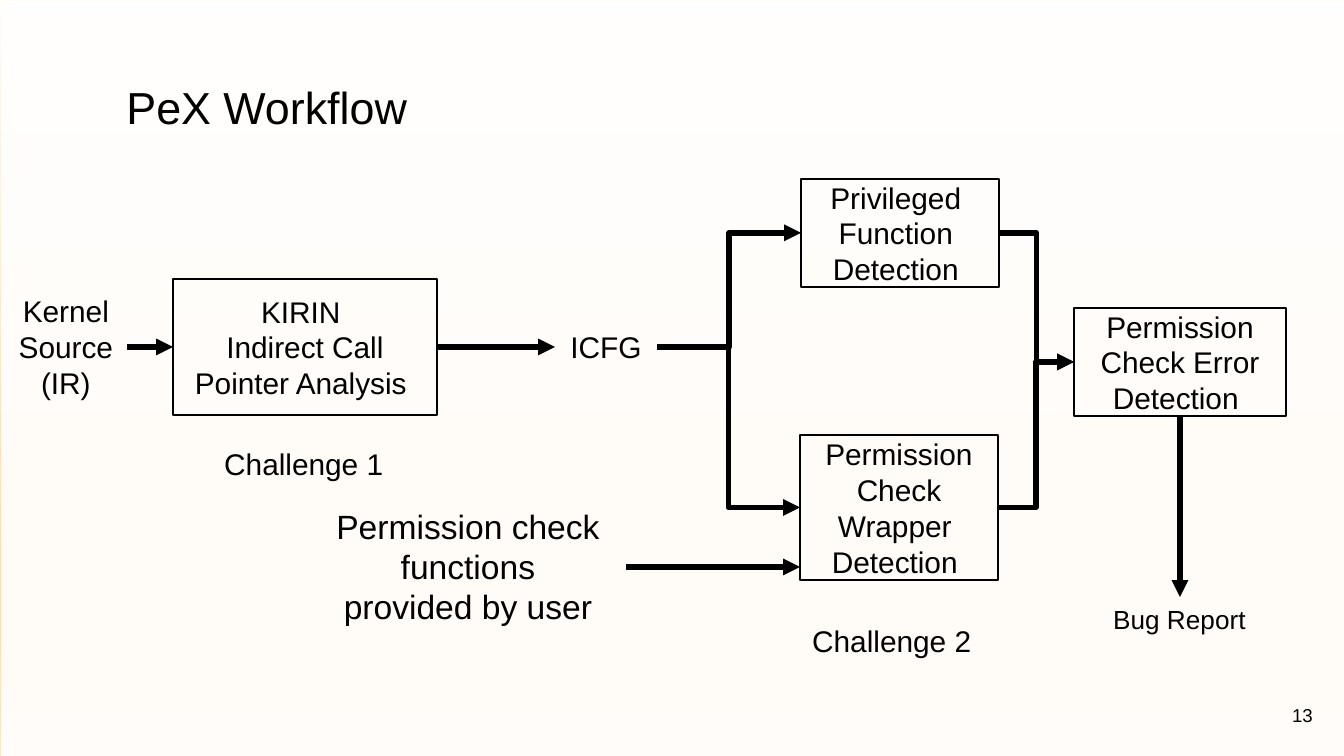
"""Builds the PeX workflow slide."""
from copy import deepcopy
from dataclasses import dataclass
from lxml.etree import SubElement
from pptx import Presentation
from pptx.dml.color import RGBColor as RGB
from pptx.enum.shapes import MSO_CONNECTOR as LINK, MSO_SHAPE as SHAPE
from pptx.enum.text import MSO_ANCHOR as ANCHOR, MSO_AUTO_SIZE as AUTO, PP_ALIGN as ALIGN
from pptx.oxml.ns import qn
from pptx.util import Emu, Pt


@dataclass
class Theme:
    font: str = "Arial"
    ink: RGB = RGB(0, 0, 0)
    veil: RGB = RGB(255, 255, 255)
    glow: tuple = ((0, "FFFBF5"), (0.74, "FFD9A9"), (0.83, "FFD9A9"), (1, "FFE6C6"))
    title: int = 24
    large: int = 18
    body: int = 16
    small: int = 14
    page: int = 10


theme = Theme()
SCALE = 914400 / 134.4


def px(*nums):
    return [Emu(round(n * SCALE)) for n in nums]


def write(shape, text, size, align=ALIGN.CENTER, anchor=ANCHOR.MIDDLE, wrap=True, grow=False):
    frame = shape.text_frame
    frame.text = text
    frame.word_wrap = wrap
    frame.vertical_anchor = anchor
    frame.auto_size = AUTO.SHAPE_TO_FIT_TEXT if grow else AUTO.NONE
    for para in frame.paragraphs:
        para.alignment = align
        for run in para.runs:
            run.font.name = theme.font
            run.font.size = Pt(size)
            run.font.color.rgb = theme.ink


deck = Presentation()
deck.slide_width, deck.slide_height = px(1344, 756)
slide = deck.slides.add_slide(deck.slide_layouts[5])
shapes = slide.shapes

fill = slide.background.fill
fill.gradient()
fill.gradient_angle = 270
stops = fill._fill._gradFill.find(qn("a:gsLst"))
for _ in range(len(theme.glow) - len(stops)):
    stops.append(deepcopy(stops[0]))
for stop, (place, tone) in zip(fill.gradient_stops, theme.glow):
    stop.position = place
    stop.color.rgb = RGB.from_string(tone)

veil = shapes.add_shape(SHAPE.RECTANGLE, *px(1, 1, 1344, 756))
veil.shadow.inherit = False
veil.line.fill.background()
veil.fill.solid()
veil.fill.fore_color.rgb = theme.veil
tone = veil._element.spPr.find(qn("a:solidFill"))[0]
SubElement(tone, qn("a:alpha")).set("val", "91000")
shapes._spTree.insert(2, veil._element)

title = shapes.title
title.left, title.top, title.width, title.height = px(113, 73, 312, 67)
write(title, "PeX Workflow", theme.title, ALIGN.LEFT, ANCHOR.TOP, False, True)

nodes = {}
for name, text, spot in (
    ("kirin", "KIRIN \nIndirect Call\nPointer Analysis ", (173, 279, 264, 136)),
    ("priv", "Privileged \nFunction \nDetection ", (801, 179, 198, 108)),
    ("wrap", "Permission Check Wrapper \nDetection ", (800, 435, 198, 145)),
    ("error", "Permission Check Error\nDetection ", (1074, 308, 212, 108)),
):
    box = nodes[name] = shapes.add_shape(SHAPE.RECTANGLE, *px(*spot))
    box.shadow.inherit = False
    box.fill.background()
    box.line.color.rgb = theme.ink
    box.line.width = Pt(1)
    write(box, text, theme.body)

mid, left, right = ALIGN.CENTER, ALIGN.LEFT, ALIGN.RIGHT
for name, text, spot, size, align, wrap, grow in (
    ("kernel", "Kernel\nSource\n(IR)", (5, 286, 122, 122), theme.body, mid, False, True),
    ("icfg", "ICFG", (555, 316, 102, 62), theme.body, mid, True, False),
    ("user", "Permission check functions\nprovided by user", (310, 499, 316, 136),
     theme.large, mid, True, True),
    ("one", "Challenge 1", (211, 439, 188, 50), theme.body, left, False, True),
    ("two", "Challenge 2", (799, 616, 188, 50), theme.body, left, False, True),
    ("bug", "Bug Report", (1100, 597, 160, 46), theme.small, left, False, True),
    ("page", "13", (1246, 686, 80, 58), theme.page, right, True, False),
):
    box = nodes[name] = shapes.add_textbox(*px(*spot))
    anchor = ANCHOR.TOP if grow else ANCHOR.MIDDLE
    write(box, text, size, align, anchor, wrap, grow)

TOP, WEST, SOUTH, EAST = range(4)
links = [shapes.add_connector(LINK.STRAIGHT, *px(626, 567, 800, 567))]
for kind, start, out, end, side in (
    (LINK.STRAIGHT, "kernel", EAST, "kirin", WEST),
    (LINK.STRAIGHT, "kirin", EAST, "icfg", WEST),
    (LINK.ELBOW, "icfg", EAST, "priv", WEST),
    (LINK.ELBOW, "icfg", EAST, "wrap", WEST),
    (LINK.ELBOW, "priv", EAST, "error", WEST),
    (LINK.ELBOW, "wrap", EAST, "error", WEST),
    (LINK.STRAIGHT, "error", SOUTH, "bug", TOP),
):
    link = shapes.add_connector(kind, 0, 0, 0, 0)
    link.begin_connect(nodes[start], out)
    link.end_connect(nodes[end], side)
    links.append(link)

for link in links:
    link.line.color.rgb = theme.ink
    link.line.width = Pt(3)
    SubElement(link.line._get_or_add_ln(), qn("a:tailEnd")).set("type", "triangle")
    SubElement(link._element.spPr, qn("a:effectLst"))

deck.save("out.pptx")
